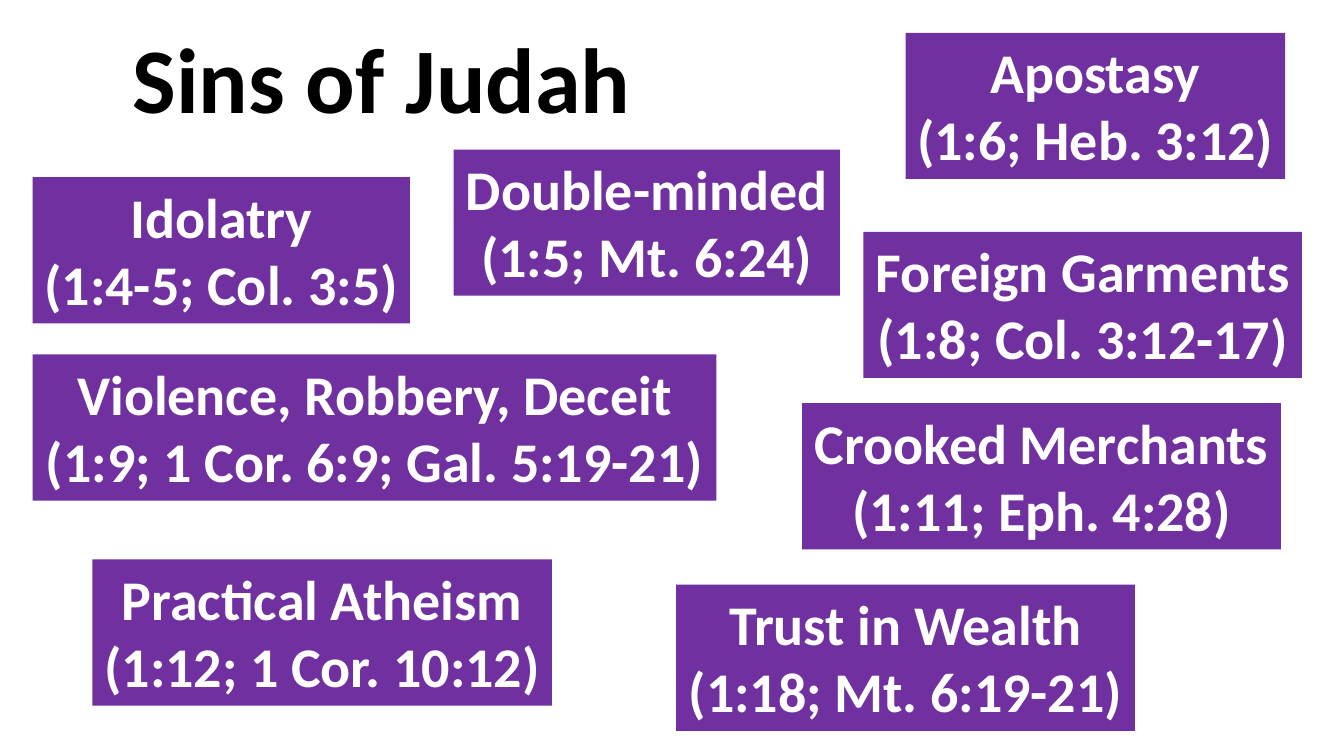
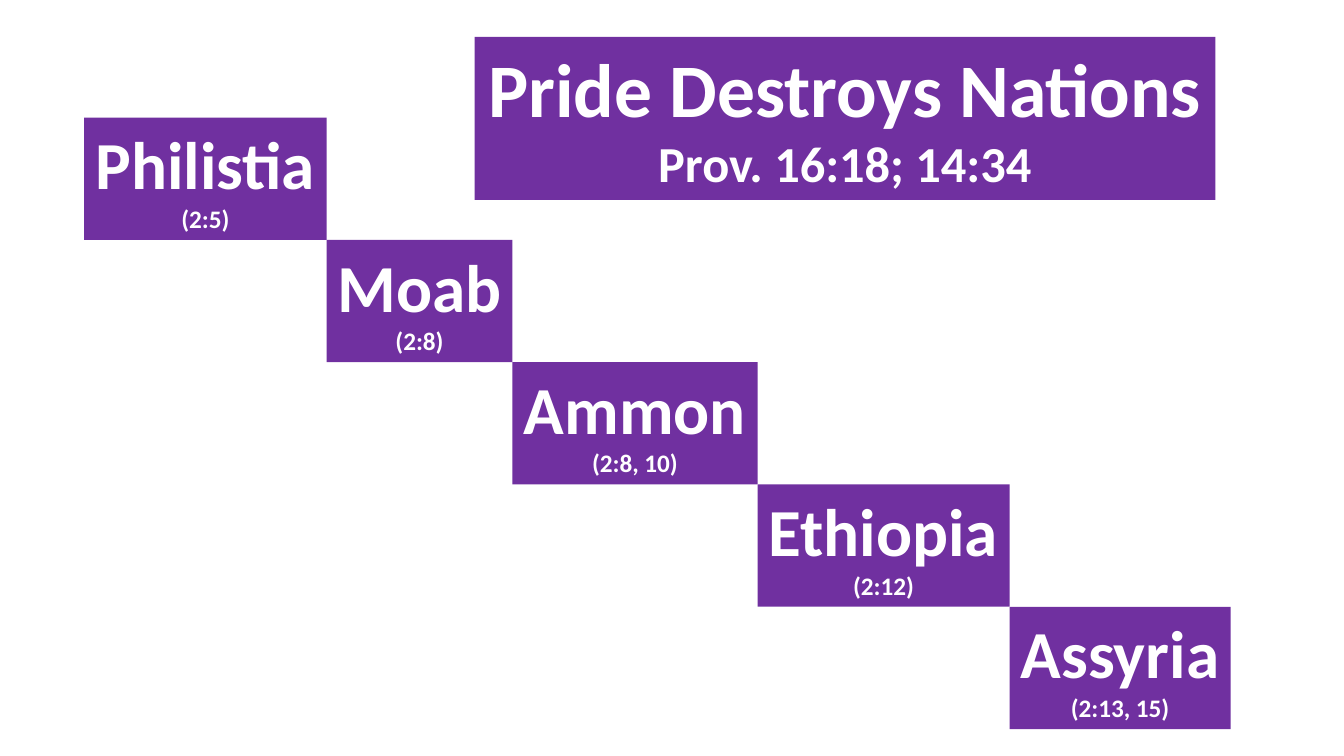
from typing import NamedTuple

from pptx import Presentation
from pptx import util as u
from pptx.dml.color import RGBColor
from pptx.enum import shapes, text

PURPLE = RGBColor(0x70, 0x30, 0xA0)
WHITE = RGBColor(0xFF, 0xFF, 0xFF)
BLACK = RGBColor(0x00, 0x00, 0x00)
FONT = "Calibri"
COLUMNS, ROWS = 160, 90
CELL = u.Inches(7.5) // ROWS
SIN_HEIGHT = 17.4
STEP_HEIGHT = 14.56
STAIR_LEFT, STAIR_TOP = 10, 14


class Area(NamedTuple):
    col: float
    row: float
    cols: float
    rows: float


class Sin(NamedTuple):
    name: str
    verses: str
    col: float
    row: float
    cols: float


class Nation(NamedTuple):
    name: str
    verses: str
    cols: float


SINS = [
    Sin("Idolatry", "(1:4-5; Col. 3:5)", 3.9, 21.1, 44.9),
    Sin("Double-minded", "(1:5; Mt. 6:24)", 54, 17.8, 46),
    Sin("Apostasy", "(1:6; Heb. 3:12)", 107.8, 3.9, 45.2),
    Sin("Foreign Garments", "(1:8; Col. 3:12-17)", 102.8, 27.6, 52.2),
    Sin("Violence, Robbery, Deceit", "(1:9; 1 Cor. 6:9; Gal. 5:19-21)", 3.9, 42.2, 81.4),
    Sin("Crooked Merchants", "(1:11; Eph. 4:28)", 95.5, 48, 57),
    Sin("Practical Atheism", "(1:12; 1 Cor. 10:12)", 11, 66.6, 54.7),
    Sin("Trust in Wealth", "(1:18; Mt. 6:19-21)", 80.5, 69.6, 54.6),
]

NATIONS = [
    Nation("Philistia", "(2:5)", 28.9),
    Nation("Moab", "(2:8)", 22.1),
    Nation("Ammon", "(2:8, 10)", 29.2),
    Nation("Ethiopia", "(2:12)", 30),
    Nation("Assyria", "(2:13, 15)", 26.3),
]


def place(area: Area) -> list[int]:
    return [round(length * CELL) for length in area]


def write(sp, *lines: str, sizes: tuple[int, ...], color: RGBColor = WHITE,
          align=text.PP_ALIGN.CENTER) -> None:
    tf = sp.text_frame
    tf.word_wrap = False
    tf.auto_size = text.MSO_AUTO_SIZE.SHAPE_TO_FIT_TEXT
    tf.vertical_anchor = text.MSO_ANCHOR.TOP
    for i, (line, size) in enumerate(zip(lines, sizes)):
        p = tf.add_paragraph() if i else tf.paragraphs[0]
        p.alignment = align
        r = p.add_run()
        r.text = line
        r.font.name = FONT
        r.font.size = u.Pt(size)
        r.font.bold = True
        r.font.color.rgb = color


def add_panel(slide, area: Area, name: str, verses: str, sizes: tuple[int, int]) -> None:
    sp = slide.shapes.add_shape(shapes.MSO_SHAPE.RECTANGLE, *place(area))
    sp.shadow.inherit = False
    sp.fill.solid()
    sp.fill.fore_color.rgb = PURPLE
    sp.line.fill.background()
    write(sp, name, verses, sizes=sizes)


def build_sins(slide) -> None:
    title = slide.shapes.add_textbox(*place(Area(14.6, 1.9, 62.3, 14.5)))
    write(title, "Sins of Judah", sizes=(66,), color=BLACK, align=text.PP_ALIGN.LEFT)
    for sin in SINS:
        area = Area(sin.col, sin.row, sin.cols, SIN_HEIGHT)
        add_panel(slide, area, sin.name, sin.verses, (40, 40))


def build_nations(slide) -> None:
    add_panel(slide, Area(56.5, 4.4, 88.2, 19.4),
              "Pride Destroys Nations", "Prov. 16:18; 14:34", (54, 36))
    col, row = STAIR_LEFT, STAIR_TOP
    for nation in NATIONS:
        area = Area(col, row, nation.cols, STEP_HEIGHT)
        add_panel(slide, area, nation.name, nation.verses, (48, 18))
        col += nation.cols
        row += STEP_HEIGHT


def main() -> None:
    prs = Presentation()
    prs.slide_width, prs.slide_height = COLUMNS * CELL, ROWS * CELL
    blank = prs.slide_layouts[6]
    for build in (build_sins, build_nations):
        build(prs.slides.add_slide(blank))
    prs.save("out.pptx")


if __name__ == "__main__":
    main()
